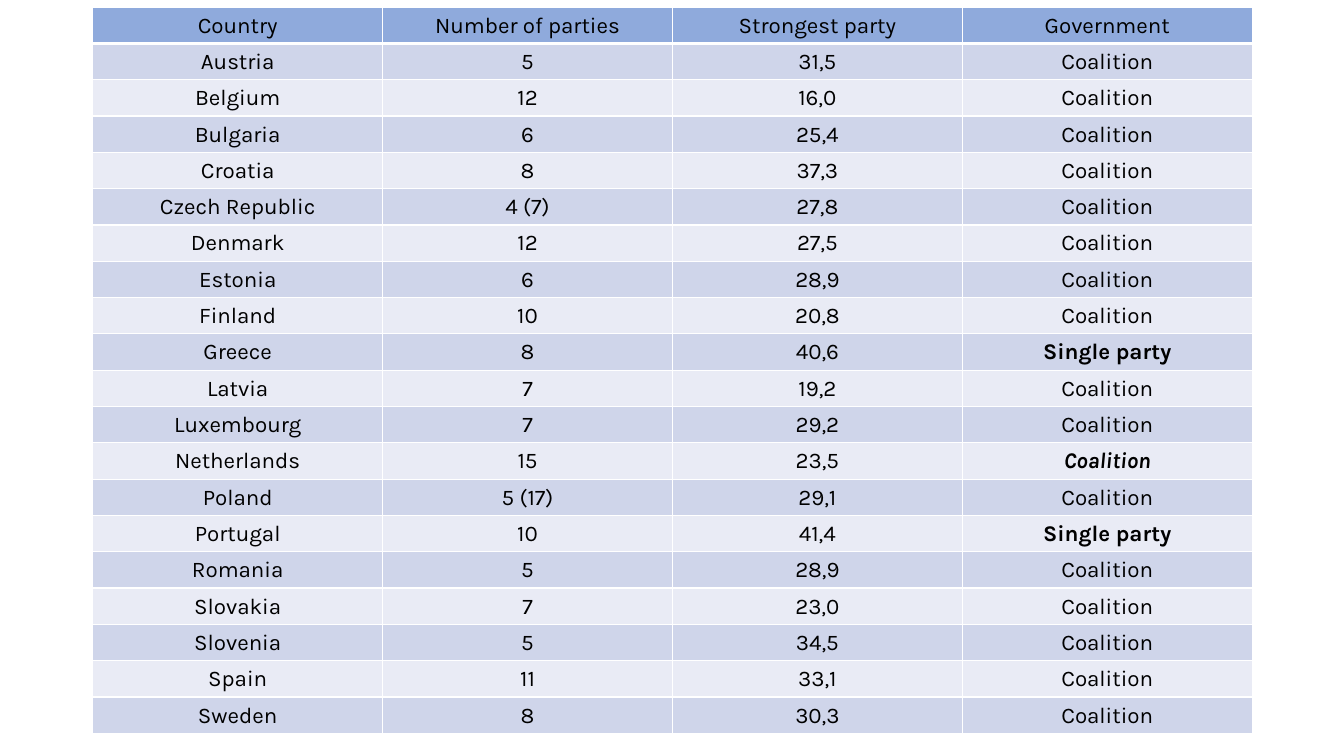
from dataclasses import dataclass

from lxml import etree
from pptx import Presentation
from pptx import util as u
from pptx.dml.color import RGBColor
from pptx.enum import text
from pptx.oxml import ns


@dataclass(frozen=True)
class Theme:
    font: str = "Karla"
    size: int = 16
    ink: str = "000000"
    header: str = "8FAADC"
    bands: tuple = ("CFD5EA", "E9EBF5")
    rule: str = "FFFFFF"
    thin: int = 1
    thick: int = 3


THEME = Theme()

HEADINGS = ("Country", "Number of parties", "Strongest party", "Government")
COUNTRIES = (
    ("Austria", "5", "31,5", "Coalition"),
    ("Belgium", "12", "16,0", "Coalition"),
    ("Bulgaria", "6", "25,4", "Coalition"),
    ("Croatia", "8", "37,3", "Coalition"),
    ("Czech Republic", "4 (7)", "27,8", "Coalition"),
    ("Denmark", "12", "27,5", "Coalition"),
    ("Estonia", "6", "28,9", "Coalition"),
    ("Finland", "10", "20,8", "Coalition"),
    ("Greece", "8", "40,6", "Single party"),
    ("Latvia", "7", "19,2", "Coalition"),
    ("Luxembourg", "7", "29,2", "Coalition"),
    ("Netherlands", "15", "23,5", "Coalition"),
    ("Poland", "5 (17)", "29,1", "Coalition"),
    ("Portugal", "10", "41,4", "Single party"),
    ("Romania", "5", "28,9", "Coalition"),
    ("Slovakia", "7", "23,0", "Coalition"),
    ("Slovenia", "5", "34,5", "Coalition"),
    ("Spain", "11", "33,1", "Coalition"),
    ("Sweden", "8", "30,3", "Coalition"),
)
# Governments that stand out from the ordinary coalitions
EMPHASIS = {
    "Greece": {"bold": True},
    "Netherlands": {"bold": True, "italic": True},
    "Portugal": {"bold": True},
}


def write_text(cell, content, bold=False, italic=False):
    """Write centred text in a cell."""
    cell.vertical_anchor = text.MSO_ANCHOR.MIDDLE
    cell.margin_left = cell.margin_right = cell.margin_top = u.Inches(0.01)
    cell.margin_bottom = 0
    paragraph = cell.text_frame.paragraphs[0]
    paragraph.alignment = text.PP_ALIGN.CENTER
    run = paragraph.add_run()
    run.text = content
    run.font.name = THEME.font
    run.font.size = u.Pt(THEME.size)
    run.font.bold = bold
    run.font.italic = italic
    run.font.color.rgb = RGBColor.from_string(THEME.ink)


def draw_borders(cell, top, bottom):
    """Rule all four sides; top and bottom are widths in points."""
    properties = cell._tc.get_or_add_tcPr()
    widths = {"lnL": THEME.thin, "lnR": THEME.thin, "lnT": top, "lnB": bottom}
    for side, width in widths.items():
        line = etree.SubElement(properties, ns.qn(f"a:{side}"), w=str(u.Pt(width)))
        fill = etree.SubElement(line, ns.qn("a:solidFill"))
        etree.SubElement(fill, ns.qn("a:srgbClr"), val=THEME.rule)


def fill_cell(cell, color):
    cell.fill.solid()
    cell.fill.fore_color.rgb = RGBColor.from_string(color)


def add_party_table(slide, left, top, width, height):
    """Place the table of parties and governments in the given box."""
    rows = (HEADINGS,) + COUNTRIES
    table = slide.shapes.add_table(
        len(rows), len(HEADINGS), left, top, width, height
    ).table
    table.horz_banding = False
    for column in table.columns:
        column.width = int(width / len(HEADINGS))
    for row in table.rows:
        row.height = int(height / len(rows))

    for row_index, values in enumerate(rows):
        # The header is set off from the bands by a thick rule
        color = THEME.bands[(row_index - 1) % 2] if row_index else THEME.header
        upper = THEME.thick if row_index == 1 else THEME.thin
        lower = THEME.thick if row_index == 0 else THEME.thin
        for column_index, content in enumerate(values):
            cell = table.cell(row_index, column_index)
            is_government = column_index == len(HEADINGS) - 1
            emphasis = EMPHASIS.get(values[0], {}) if is_government else {}
            write_text(cell, content, **emphasis)
            draw_borders(cell, upper, lower)
            fill_cell(cell, color)


def main():
    presentation = Presentation()
    presentation.slide_width = u.Inches(13.33)
    presentation.slide_height = u.Inches(7.5)
    blank_layout = presentation.slide_layouts[6]
    slide = presentation.slides.add_slide(blank_layout)
    add_party_table(
        slide, u.Inches(0.92), u.Inches(0.07), u.Inches(11.5), u.Inches(7.21)
    )
    presentation.save("out.pptx")


if __name__ == "__main__":
    main()
